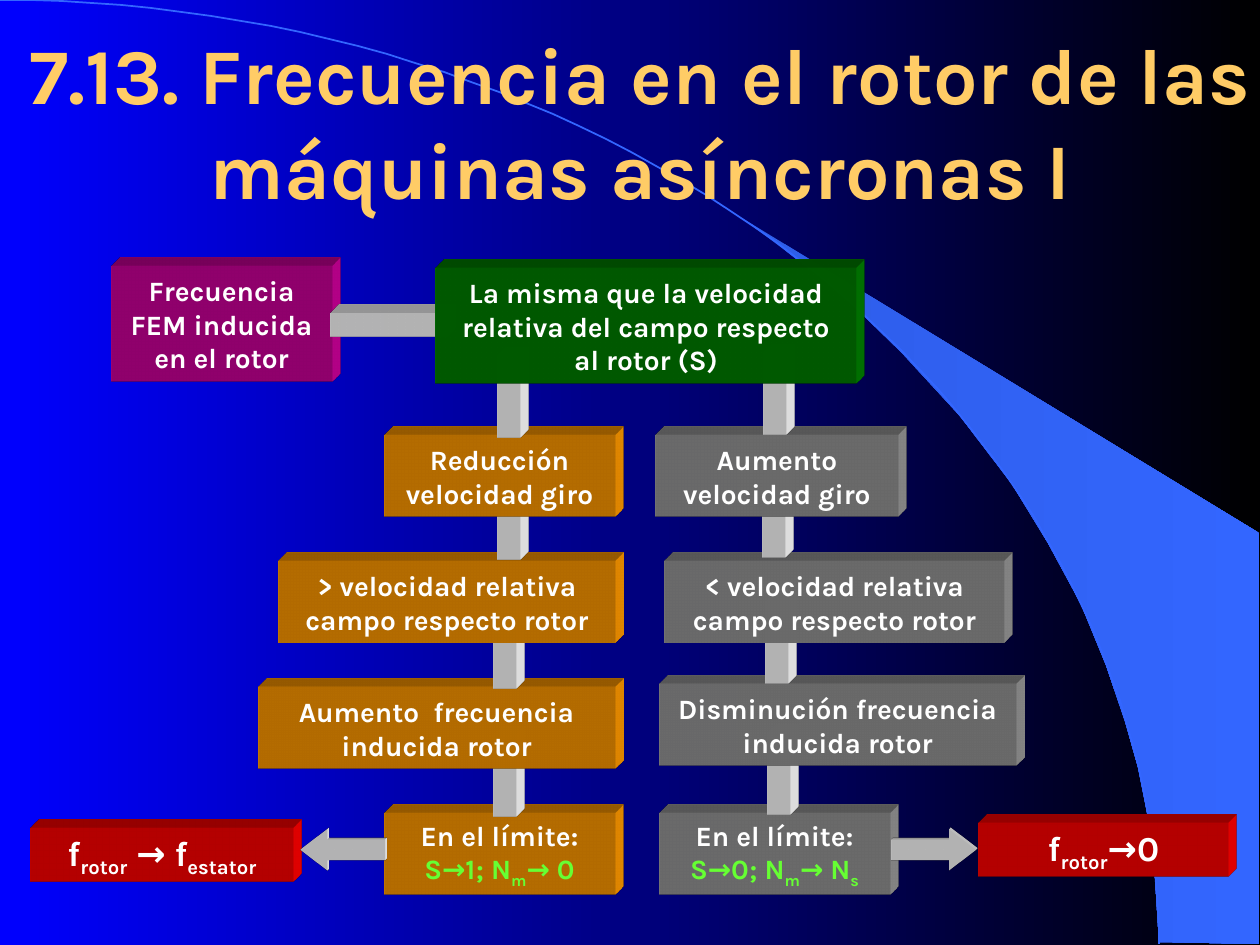
import math

import pptx
import pptx.dml.color
import pptx.enum.shapes
import pptx.enum.text
import pptx.oxml
import pptx.oxml.ns
import pptx.util

RGB = pptx.dml.color.RGBColor
BLUE = RGB(0x00, 0x00, 0xFF)
BLACK = RGB(0x00, 0x00, 0x00)
SWOOSH_DARK = RGB(0x2E, 0x5D, 0xE7)
SWOOSH = RGB(0x33, 0x66, 0xFF)
GOLD = RGB(0xFF, 0xCC, 0x66)
WHITE = RGB(0xFF, 0xFF, 0xFF)
LIME = RGB(0x66, 0xFF, 0x33)
MAGENTA = RGB(0xCC, 0x00, 0x99)
GREEN = RGB(0x00, 0x80, 0x00)
ORANGE = RGB(0xFF, 0x99, 0x00)
GREY = RGB(0x96, 0x96, 0x96)
RED = RGB(0xFF, 0x00, 0x00)

WIDTH, HEIGHT = 1260, 945
SHAPE = pptx.enum.shapes.MSO_SHAPE
BLOCK_DEPTH, ARROW_DEPTH = 24, 5
LINK_LENGTH, LINK_THICKNESS = 81, 23
DRAWING = pptx.oxml.ns.nsdecls("a")


class Diagram:
    scale = 914400 / 126
    font = "Karla"

    def __init__(self, slide):
        self.slide = slide

    def emu(self, *lengths):
        return [pptx.util.Emu(round(length * self.scale)) for length in lengths]

    def gradient(self, fill, first, last):
        fill.gradient()
        fill.gradient_angle = 0
        for stop, colour, position in zip(fill.gradient_stops, (first, last), (0, 1)):
            stop.color.rgb = colour
            stop.position = position

    def outline(self, points, close):
        builder = self.slide.shapes.build_freeform(*points[0], scale=self.scale)
        builder.add_line_segments(points[1:], close=close)
        shape = builder.convert_to_shape()
        shape.shadow.inherit = False
        return shape

    def extrude(self, shape, colour, depth):
        scene = (
            f'<a:scene3d {DRAWING}><a:camera prst="legacyObliqueTopRight"/>'
            '<a:lightRig rig="legacyFlat3" dir="b"/></a:scene3d>'
        )
        solid = (
            f'<a:sp3d {DRAWING} extrusionH="{round(depth * self.scale)}" prstMaterial="legacyMatte">'
            f'<a:extrusionClr><a:srgbClr val="{colour}"/></a:extrusionClr></a:sp3d>'
        )
        for part in (scene, solid):
            shape._element.spPr.append(pptx.oxml.parse_xml(part))

    def label(self, frame, paragraphs, size, colour):
        frame.word_wrap = True
        frame.vertical_anchor = pptx.enum.text.MSO_ANCHOR.MIDDLE
        look = {"name": self.font, "size": pptx.util.Pt(size), "bold": True}
        for index, runs in enumerate(paragraphs):
            paragraph = frame.add_paragraph() if index else frame.paragraphs[0]
            paragraph.alignment = pptx.enum.text.PP_ALIGN.CENTER
            for text, run_colour, subscript in runs:
                run = paragraph.add_run()
                run.text = text
                for key, value in look.items():
                    setattr(run.font, key, value)
                run.font.color.rgb = run_colour or colour
                if subscript:
                    run._r.get_or_add_rPr().set("baseline", "-25000")

    def title(self, text, left, top, width, height):
        box = self.slide.shapes.add_textbox(*self.emu(left, top, width, height))
        self.label(box.text_frame, [[plain(text)]], 45, GOLD)

    def solid(self, kind, left, top, width, height, colour, depth, rotation=0):
        shape = self.slide.shapes.add_shape(kind, *self.emu(left, top, width, height))
        shape.rotation = rotation
        shape.shadow.inherit = False
        shape.fill.solid()
        shape.fill.fore_color.rgb = colour
        shape.line.fill.background()
        self.extrude(shape, colour, depth)
        return shape

    def block(self, left, top, width, height, colour, paragraphs, size=16):
        shape = self.solid(SHAPE.RECTANGLE, left, top, width, height, colour, BLOCK_DEPTH)
        self.label(shape.text_frame, paragraphs, size, WHITE)

    def link(self, centre_x, centre_y, length=LINK_LENGTH, rotation=90):
        self.solid(
            SHAPE.RECTANGLE, centre_x - length / 2, centre_y - LINK_THICKNESS / 2,
            length, LINK_THICKNESS, WHITE, BLOCK_DEPTH, rotation,
        )

    def arrow(self, left, top, rotation=0):
        shape = self.solid(SHAPE.LEFT_ARROW, left, top, 85, 42, WHITE, ARROW_DEPTH, rotation)
        shape.adjustments[0] = 0.5
        shape.adjustments[1] = 0.65


def plain(text, colour=None):
    return text, colour, False


def sub(text, colour=None):
    return text, colour, True


def lines(*texts):
    return [[plain(text)] for text in texts]


SWOOSH_EDGE = [
    (1159, 942), (1259, 944), (1259, 533), (742, 218), (786, 251), (823, 280),
    (863, 315), (902, 353), (960, 416), (1012, 484), (1048, 543), (1081, 604),
    (1106, 665), (1125, 721), (1138, 767), (1150, 827), (1155, 877),
]
LIMIT = plain("En el límite:")
STEPS = [
    (384, 813, 231, ORANGE, [[LIMIT], [plain("S→1; N", LIME), sub("m", LIME), plain("→ 0", LIME)]], 505, 776),
    (659, 813, 231, GREY,
     [[LIMIT], [plain("S→0; N", LIME), sub("m", LIME), plain("→ N", LIME), sub("s", LIME)]], 779, 774),
    (258, 687, 357, ORANGE, lines("Aumento  frecuencia inducida rotor"), 505, 648),
    (659, 684, 357, GREY, lines("Disminución frecuencia inducida rotor"), 777, 643),
    (279, 561, 336, ORANGE, lines("> velocidad relativa campo respecto rotor"), 509, 519),
    (665, 561, 339, GREY, lines("< velocidad relativa campo respecto rotor"), 774, 517),
    (656, 435, 242, GREY, lines("Aumento", "velocidad giro"), 775, 394),
    (384, 435, 231, ORANGE, lines("Reducción", "velocidad giro"), 509, 397),
]
STEP_HEIGHT = 82


def main():
    deck = pptx.Presentation()
    diagram = Diagram(deck.slides.add_slide(deck.slide_layouts[6]))
    deck.slide_width, deck.slide_height = diagram.emu(WIDTH, HEIGHT)
    diagram.gradient(diagram.slide.background.fill, BLUE, BLACK)

    swoosh = diagram.outline(SWOOSH_EDGE, True)
    diagram.gradient(swoosh.fill, SWOOSH_DARK, SWOOSH)
    swoosh.line.fill.background()

    angles = [math.pi / 2 * step / 60 for step in range(61)]
    arc = diagram.outline([(1159 * math.sin(a), 944 * (1 - math.cos(a))) for a in angles], False)
    arc.fill.background()
    arc.line.color.rgb = SWOOSH
    arc.line.width = pptx.util.Pt(1)

    diagram.title("7.13. Frecuencia en el rotor de las máquinas asíncronas I", 10, 42, 1260, 157)
    diagram.block(111, 266, 221, 116, MAGENTA, lines("Frecuencia FEM inducida", "en el rotor"))

    for left, top, width, colour, paragraphs, link_x, link_y in STEPS:
        diagram.block(left, top, width, STEP_HEIGHT, colour, paragraphs)
        diagram.link(link_x, link_y)

    stator = [[plain("f"), sub("rotor"), plain(" → f"), sub("estator")]]
    diagram.block(31, 828, 262, 54, RED, stator, 20)
    diagram.arrow(300, 829)
    diagram.block(979, 823, 249, 54, RED, [[plain("f"), sub("rotor"), plain("→0")]], 20)
    diagram.arrow(891, 829, 180)

    diagram.link(389, 325, 116, 0)
    same_speed = "La misma que la velocidad relativa del campo respecto al rotor (S)"
    diagram.block(436, 268, 420, 116, GREEN, lines(same_speed))
    deck.save("out.pptx")


if __name__ == "__main__":
    main()
